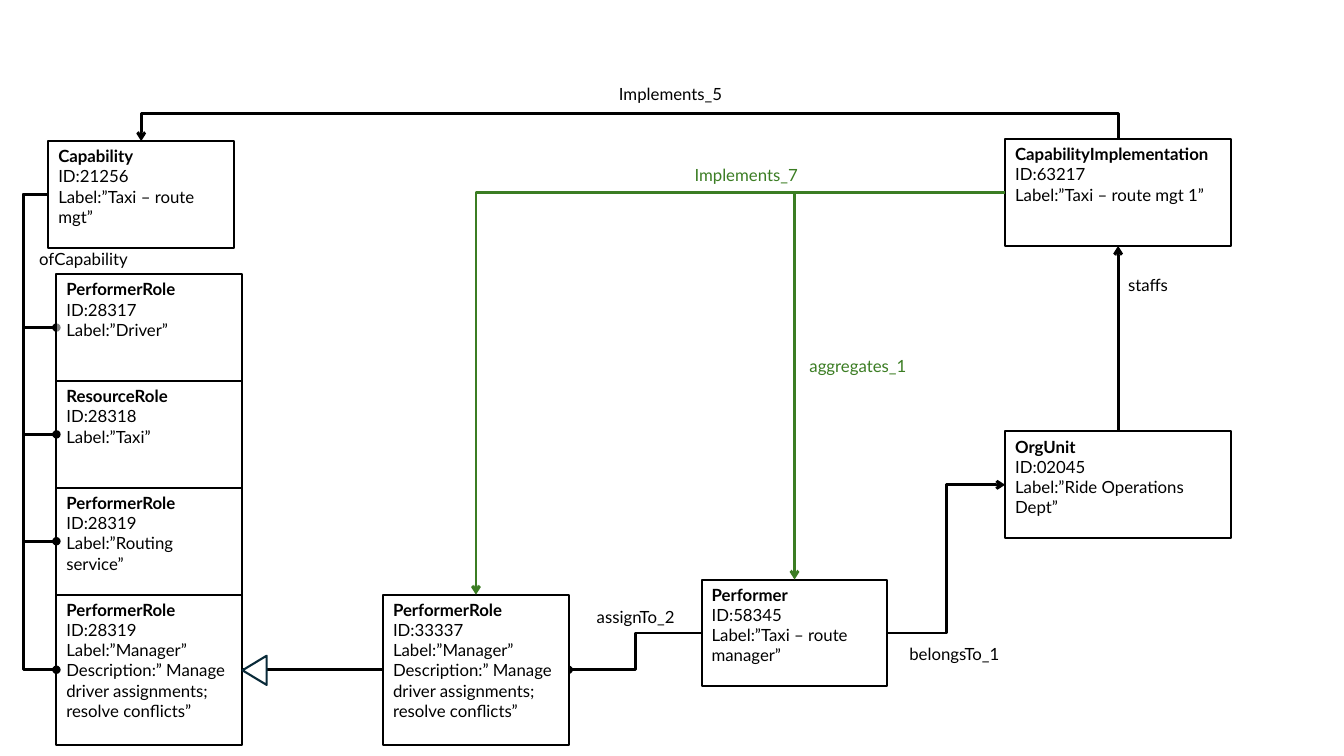
import lxml.etree
import pptx
import pptx.dml.color
import pptx.enum.shapes
import pptx.enum.text
import pptx.oxml.ns
import pptx.util

BLACK, WHITE, GREEN, NAVY = "000000", "FFFFFF", "3B7D23", "092A39"
TOP, LEFT, BOTTOM, RIGHT = range(4)
WIDE, NARROW, HIGH, TALL = 224, 184, 106, 149
SHAPE = pptx.enum.shapes.MSO_SHAPE
LINK = pptx.enum.shapes.MSO_CONNECTOR
qn = pptx.oxml.ns.qn


def px(n):
    """100 px to the inch."""
    return round(n * 9144)


def rgb(code):
    return pptx.dml.color.RGBColor.from_string(code)


def style(run, color, bold=False):
    run.font.name = "Lato"
    run.font.size = pptx.util.Pt(12)
    run.font.bold = bold
    run.font.color.rgb = rgb(color)


# Boxes and labels
def shape(slide, kind, area, line=BLACK):
    item = slide.shapes.add_shape(kind, *map(px, area))
    item.shadow.inherit = False
    item.fill.solid()
    item.fill.fore_color.rgb = rgb(WHITE)
    item.line.color.rgb = rgb(line)
    item.line.width = pptx.util.Pt(1.5)
    return item


def card(slide, area, lines, clear=False):
    item = shape(slide, SHAPE.RECTANGLE, area)
    if clear:
        fill = item.fill._xPr.find(qn("a:solidFill"))
        lxml.etree.SubElement(fill[0], qn("a:alpha"), val="49000")
    frame = item.text_frame
    frame.word_wrap = True
    frame.vertical_anchor = pptx.enum.text.MSO_ANCHOR.TOP
    frame.text = "\n".join(lines)
    for row, para in enumerate(frame.paragraphs):
        para.alignment = pptx.enum.text.PP_ALIGN.LEFT
        style(para.runs[0], BLACK, row == 0)
    return item


def label(slide, x, y, width, text, color=BLACK):
    box = slide.shapes.add_textbox(px(x), px(y), px(width), px(30))
    box.text_frame.word_wrap = True
    box.text_frame.text = text
    style(box.text_frame.paragraphs[0].runs[0], color)


# Connectors
def site(item, side):
    x = item.left + item.width * (0, 0, 1, 2)[side] // 2
    y = item.top + item.height * (0, 1, 2, 1)[side] // 2
    if side == TOP or side == BOTTOM:
        x = item.left + item.width // 2
    return x, y


def join(slide, start, end, head=None, color=BLACK, kind=LINK.STRAIGHT):
    """Join two (box, side) pairs; the head sits at the start."""
    wire = slide.shapes.add_connector(kind, *site(*start), *site(*end))
    wire.begin_connect(*start)
    wire.end_connect(*end)
    wire.line.color.rgb = rgb(color)
    wire.line.width = pptx.util.Pt(2)
    if head:
        lxml.etree.SubElement(wire.line._get_or_add_ln(), qn("a:headEnd"), type=head)
    lxml.etree.SubElement(wire._element.spPr, qn("a:effectLst"))
    return wire


def bend(wire, share):
    """Put the elbow at a share of the way from start to end."""
    guides = wire._element.spPr.find(qn("a:prstGeom")).find(qn("a:avLst"))
    lxml.etree.SubElement(guides, qn("a:gd"), name="adj1",
                          fmla=f"val {round(share * 100000)}")


def across(slide, start, end, head, mid):
    """Elbow that leaves sideways and turns at x = mid."""
    wire = join(slide, start, end, head, kind=LINK.ELBOW)
    x, last = site(*start)[0], site(*end)[0]
    bend(wire, (px(mid) - x) / (last - x))


def upward(slide, start, end, color=BLACK, mid=None):
    """Elbow that leaves upward, then runs right; mid is the y of a second turn."""
    wire = join(slide, start, end, "arrow", color, LINK.ELBOW)
    (x, y), (last, high) = site(*start), site(*end)
    wide, tall = last - x, y - high
    # A quarter turn swaps width and height around the same centre
    wire.left, wire.top = (x + last - tall) // 2, (y + high - wide) // 2
    wire.width, wire.height = tall, wide
    frame = wire._element.spPr.find(qn("a:xfrm"))
    for key, value in (("rot", "5400000"), ("flipH", "1"), ("flipV", "1")):
        frame.set(key, value)
    if mid is None:
        wire._element.spPr.find(qn("a:prstGeom")).set("prst", "bentConnector2")
    else:
        bend(wire, (y - px(mid)) / tall)


# Left: the capability and its roles
def left(slide, x, y):
    cap = card(slide, (x, y, NARROW, HIGH),
               ["Capability", "ID:21256", "Label:”Taxi – route mgt”"])
    roles = [
        ("PerformerRole", "ID:28317", "Label:”Driver”"),
        ("ResourceRole", "ID:28318", "Label:”Taxi”"),
        ("PerformerRole", "ID:28319", "Label:”Routing service”"),
        ("PerformerRole", "ID:28319", "Label:”Manager”",
         "Description:” Manage driver assignments; resolve conflicts”"),
    ]
    cards = []
    for row, lines in enumerate(roles):
        tall = TALL if len(lines) > 3 else HIGH
        area = (x + 8, y + 132 + row * HIGH, NARROW, tall)
        cards.append(card(slide, area, lines, clear=row < 2))
    for item in cards:
        across(slide, (item, LEFT), (cap, LEFT), "oval", x - 25)
    # The driver card veils half of its dot
    slide.shapes._spTree.append(cards[0]._element)
    label(slide, x - 19, y + 102, 111, "ofCapability")
    return cap, cards[-1]


# Middle: the assigned role and its performer
def middle(slide, x, y):
    role = card(slide, (x, y, NARROW, TALL),
                ["PerformerRole", "ID:33337", "Label:”Manager”",
                 "Description:” Manage driver assignments; resolve conflicts”"])
    doer = card(slide, (x + 316, y - 15, NARROW, HIGH),
                ["Performer", "ID:58345", "Label:”Taxi – route manager”"])
    across(slide, (role, RIGHT), (doer, LEFT), "oval", x + 250)
    slide.shapes._spTree.append(role._element)
    label(slide, x + 202, y + 7, 111, "assignTo_2")
    return role, doer


# Right: the implementation and its staff
def right(slide, x, y):
    work = card(slide, (x, y, WIDE, HIGH),
                ["CapabilityImplementation", "ID:63217", "Label:”Taxi – route mgt 1”"])
    unit = card(slide, (x, y + 290, WIDE, HIGH),
                ["OrgUnit", "ID:02045", "Label:”Ride Operations Dept”"])
    join(slide, (work, BOTTOM), (unit, TOP), "arrow")
    label(slide, x + 112, y + 130, 125, "staffs")
    return work, unit


# Links between the regions
def links(slide, cap, boss, role, doer, work, unit):
    upward(slide, (cap, TOP), (work, TOP), mid=113)
    label(slide, 604, 78, 125, "Implements_5")
    for item in (role, doer):
        upward(slide, (item, TOP), (work, LEFT), GREEN)
    label(slide, 679, 159, 133, "Implements_7", GREEN)
    label(slide, 793, 348, 133, "aggregates_1", GREEN)
    across(slide, (unit, LEFT), (doer, RIGHT), "arrow", 939)
    label(slide, 892, 634, 111, "belongsTo_1")
    join(slide, (boss, RIGHT), (role, LEFT))
    tip = shape(slide, SHAPE.ISOSCELES_TRIANGLE, (238, 653, 29, 24), NAVY)
    tip.rotation = 270


def main():
    deck = pptx.Presentation()
    deck.slide_width, deck.slide_height = px(1333), px(750)
    slide = deck.slides.add_slide(deck.slide_layouts[6])
    cap, boss = left(slide, 48, 140)
    role, doer = middle(slide, 380, 590)
    work, unit = right(slide, 997, 138)
    links(slide, cap, boss, role, doer, work, unit)
    deck.save("out.pptx")


if __name__ == "__main__":
    main()
